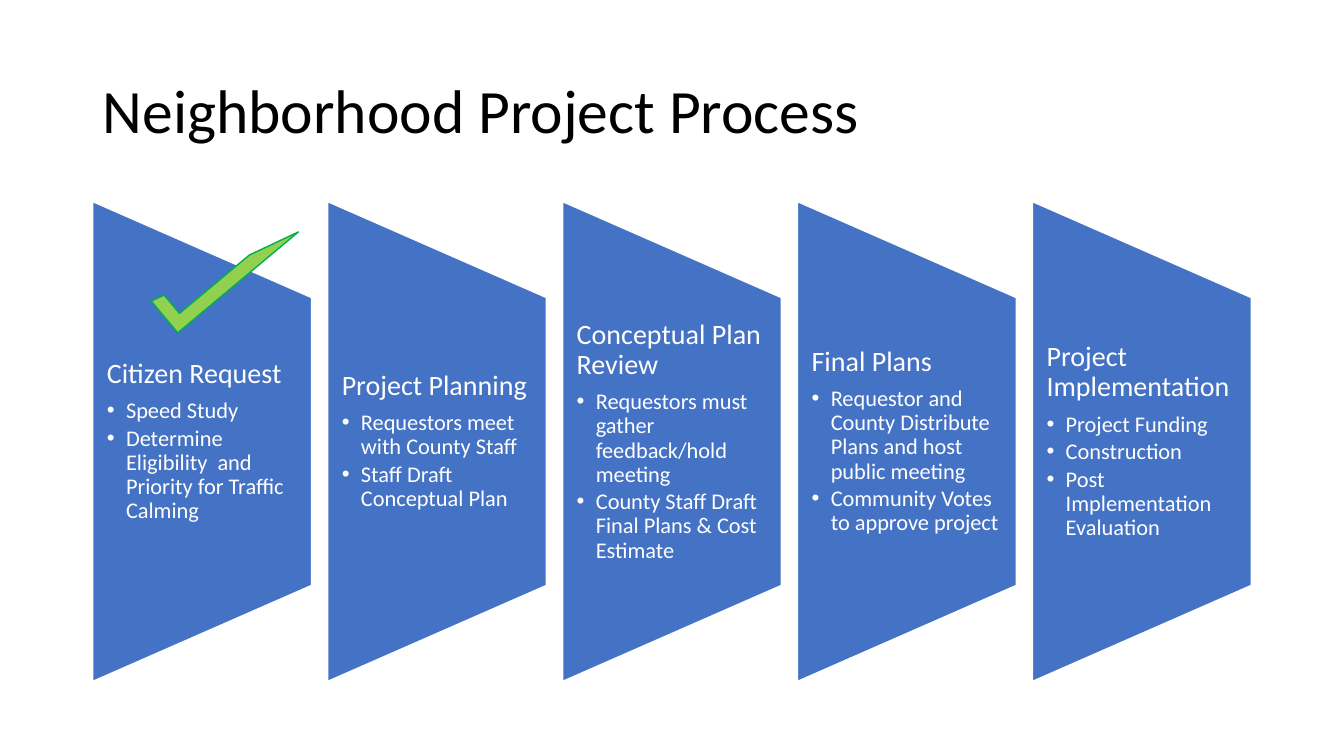
from lxml import etree
from pptx import Presentation
from pptx.dml.color import RGBColor
from pptx.enum import shapes, text
from pptx.oxml import ns
from pptx.util import Inches, Pt

BLUE = RGBColor(0x44, 0x72, 0xC4)
WHITE = RGBColor(0xFF, 0xFF, 0xFF)
BLACK = RGBColor(0, 0, 0)
LIME = RGBColor(0x92, 0xD0, 0x50)
GREEN = RGBColor(0x00, 0xB0, 0x50)
FONT = "Calibri"

STAGES = [
    ("Citizen Request",
     ["Speed Study",
      "Determine Eligibility  and Priority for Traffic Calming"]),
    ("Project Planning",
     ["Requestors meet with County Staff",
      "Staff Draft Conceptual Plan"]),
    ("Conceptual Plan Review",
     ["Requestors must gather feedback/hold meeting",
      "County Staff Draft Final Plans & Cost Estimate"]),
    ("Final Plans",
     ["Requestor and County Distribute Plans and host public meeting",
      "Community Votes to approve project"]),
    ("Project Implementation",
     ["Project Funding", "Construction", "Post Implementation Evaluation"]),
]


def write(para, words, size, color, after=0):
    para.alignment = text.PP_ALIGN.LEFT
    para.line_spacing = 0.9
    para.space_before = Pt(0)
    para.space_after = Pt(after)
    run = para.add_run()
    run.text = words
    run.font.name = FONT
    run.font.size = Pt(size)
    run.font.color.rgb = color


def bullet(para):
    para.level = 1
    props = para._p.get_or_add_pPr()
    props.set("marL", str(Inches(0.19)))
    props.set("indent", str(-Inches(0.19)))
    font = etree.SubElement(props, ns.qn("a:buFont"))
    font.set("typeface", "Arial")
    mark = etree.SubElement(props, ns.qn("a:buChar"))
    mark.set("char", "•")


def paint(shape, fill, line):
    shape.shadow.inherit = False
    shape.fill.solid()
    shape.fill.fore_color.rgb = fill
    shape.line.color.rgb = line
    shape.line.width = Pt(1)


def add_title(slide, x, y, w, h):
    title = slide.shapes.title
    title.left, title.top = Inches(x), Inches(y)
    title.width, title.height = Inches(w), Inches(h)
    frame = title.text_frame
    frame.vertical_anchor = text.MSO_ANCHOR.MIDDLE
    write(frame.paragraphs[0], "Neighborhood Project Process", 44, BLACK)


def add_stage(slide, x, y, w, h, head, items):
    panel = slide.shapes.add_shape(
        shapes.MSO_SHAPE.FLOWCHART_MANUAL_OPERATION,
        Inches(x + (w - h) / 2), Inches(y + (h - w) / 2),
        Inches(h), Inches(w))
    panel.rotation = 270
    paint(panel, BLUE, WHITE)
    box = slide.shapes.add_textbox(
        Inches(x), Inches(y + h * 0.2), Inches(w), Inches(h * 0.6))
    frame = box.text_frame
    frame.word_wrap = True
    frame.vertical_anchor = text.MSO_ANCHOR.MIDDLE
    frame.margin_left = frame.margin_right = Inches(0.14)
    frame.margin_top = frame.margin_bottom = 0
    write(frame.paragraphs[0], head, 20, WHITE, 7)
    for item in items:
        para = frame.add_paragraph()
        write(para, item, 16, WHITE, 2.4)
        bullet(para)


def add_stages(slide, x, y, w, h):
    step = 2.33
    wide = w - step * (len(STAGES) - 1)
    for i, (head, items) in enumerate(STAGES):
        add_stage(slide, x + i * step, y, wide, h, head, items)


def add_check(slide, x, y, w, h):
    check = slide.shapes.add_shape(
        shapes.MSO_SHAPE.HALF_FRAME,
        Inches(x), Inches(y), Inches(w), Inches(h))
    check.rotation = 320.1
    check._element.spPr.find(ns.qn("a:xfrm")).set("flipV", "1")
    paint(check, LIME, GREEN)


def main():
    deck = Presentation()
    deck.slide_width, deck.slide_height = Inches(13.33), Inches(7.5)
    slide = deck.slides.add_slide(deck.slide_layouts[5])
    add_title(slide, 0.92, 0.4, 11.5, 1.45)
    add_stages(slide, 0.92, 2, 11.49, 4.76)
    add_check(slide, 1.45, 2.44, 1.56, 0.41)
    deck.save("out.pptx")


if __name__ == "__main__":
    main()
